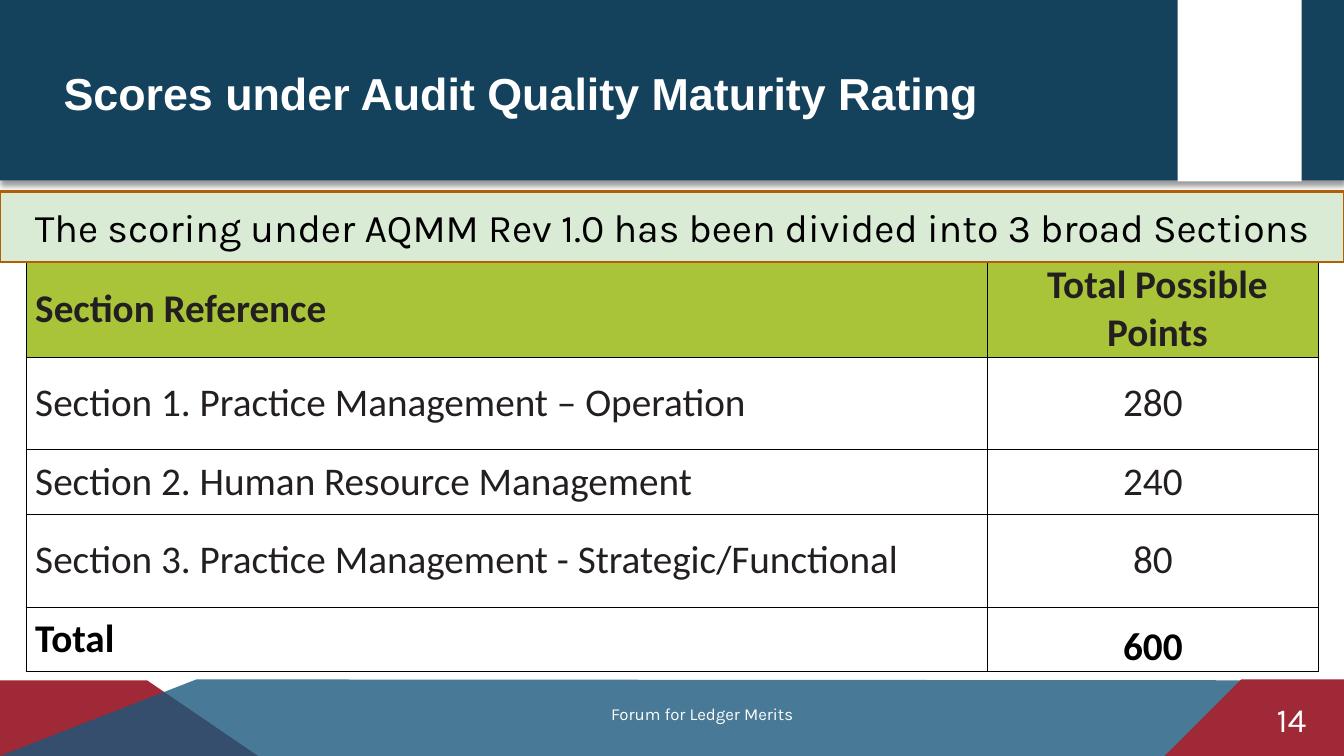
from lxml.etree import SubElement
from pptx import Presentation
from pptx.dml.color import RGBColor
from pptx.enum.shapes import MSO_SHAPE as Preset
from pptx.enum.text import MSO_ANCHOR as Anchor, MSO_AUTO_SIZE as AutoSize, PP_ALIGN as Align
from pptx.oxml.ns import qn
from pptx.util import Pt

PX = 9144  # 100 px to the inch
COLORS = {
    "navy": "14425D", "blue": "1B587C", "red": "9F2936", "white": "FFFFFF",
    "black": "000000", "ink": "231F20", "green": "A9C438", "mint": "D9EAD5",
    "orange": "B25E07",
}
SCORES = [
    ("Section Reference", "Total Possible Points"),
    ("Section 1. Practice Management – Operation", "280"),
    ("Section 2. Human Resource Management", "240"),
    ("Section 3. Practice Management - Strategic/Functional", "80"),
    ("Total", "600"),
]
COLUMN_WIDTHS = (953, 329)
ROW_HEIGHTS = (90, 92, 64, 92, 64)


def color(name):
    return RGBColor.from_string(COLORS[name])


def emu(box):
    return [length * PX for length in box]


def paint(shape, fill, line=None, width=1.5):
    shape.shadow.inherit = False
    shape.fill.solid()
    shape.fill.fore_color.rgb = color(fill)
    if line:
        shape.line.color.rgb = color(line)
        shape.line.width = Pt(width)
    else:
        shape.line.fill.background()


def write(frame, text, ink, align=Align.LEFT, **font):
    para = frame.paragraphs[0]
    para.alignment = align
    span = para.add_run()
    span.text = text
    span.font.color.rgb = color(ink)
    for name, value in font.items():
        setattr(span.font, name, value)


def set_frame(frame, **values):
    for name, value in values.items():
        setattr(frame, name, value)


def add_block(page, box, fill, line=None):
    block = page.shapes.add_shape(Preset.RECTANGLE, *emu(box))
    paint(block, fill, line)
    return block


def add_label(page, box, text, size):
    label = page.shapes.add_textbox(*emu(box))
    set_frame(label.text_frame, word_wrap=True, auto_size=AutoSize.NONE)
    write(label.text_frame, text, "white", Align.CENTER, name="Karla", size=Pt(size))


def add_outline(page, points, fill):
    builder = page.shapes.build_freeform(*points[0], scale=PX)
    builder.add_line_segments(points[1:], close=True)
    outline = builder.convert_to_shape()
    paint(outline, fill)
    return outline


def add_alpha(parent, percent):
    SubElement(parent, qn("a:alpha"), val=str(percent * 1000))


def add_footer(page, box):
    left, top, width, height = box
    right, bottom = left + width, top + height
    add_outline(page, [(left, bottom), (left, top), (left + 146, top), (left + 256, bottom)], "red")
    band = add_outline(
        page, [(left, bottom), (left + 195, top - 1), (right, top), (right, bottom)], "blue")
    add_alpha(band.fill._xPr.find(".//" + qn("a:srgbClr")), 80)
    add_outline(
        page,
        [(right, bottom), (right, top - 1), (right - 102, top - 1), (right - 178, bottom)], "red")
    add_label(page, (right - 104, top + 13, 104, 50), "14", 24)
    add_label(page, (left + 226, top + 18, 941, 30), "Forum for Ledger Merits", 12)


def add_header(page, box):
    left, top, width, height = box
    band = add_block(page, box, "navy")
    effects = band._element.spPr.find(qn("a:effectLst"))
    shadow = SubElement(effects, qn("a:outerShdw"), blurRad=str(Pt(4)), dist=str(Pt(3)),
                        dir="5400000", algn="t", rotWithShape="0")
    add_alpha(SubElement(shadow, qn("a:srgbClr"), val=COLORS["black"]), 40)
    add_block(page, (left + 1168, top, 123, height + 1), "white")

    # Title, brought in front of the band
    title = page.shapes.title
    page.shapes._spTree.append(title._element)
    title.left, title.top, title.width, title.height = emu((left + 53, top + 60, 1115, 64))
    set_frame(title.text_frame, word_wrap=True, auto_size=AutoSize.NONE,
              vertical_anchor=Anchor.MIDDLE)
    write(title.text_frame, "Scores under Audit Quality Maturity Rating", "white",
          name="Arial", size=Pt(32), bold=True)


def add_borders(cell):
    properties = cell._tc.get_or_add_tcPr()
    for side in ("lnL", "lnR", "lnT", "lnB"):
        line = SubElement(properties, qn("a:" + side), w=str(Pt(0.5)))
        SubElement(SubElement(line, qn("a:solidFill")), qn("a:srgbClr"), val=COLORS["black"])


def add_scores(page, box):
    table = page.shapes.add_table(len(SCORES), len(COLUMN_WIDTHS), *emu(box)).table
    table.first_row = table.horz_banding = False
    for column, width in zip(table.columns, COLUMN_WIDTHS):
        column.width = width * PX
    last = len(SCORES) - 1
    for r, (row, height) in enumerate(zip(table.rows, ROW_HEIGHTS)):
        row.height = height * PX
        for c, cell in enumerate(row.cells):
            add_borders(cell)
            set_frame(cell, margin_right=0, margin_top=0, margin_bottom=0,
                      margin_left=9 * PX if c == 0 or r == 0 else 0,
                      vertical_anchor=Anchor.BOTTOM if (r, c) == (last, 1) else Anchor.MIDDLE)
            if r == 0:
                cell.fill.solid()
                cell.fill.fore_color.rgb = color("green")
            else:
                cell.fill.background()
            write(cell.text_frame, SCORES[r][c], "black" if r == last else "ink",
                  Align.CENTER if c else Align.LEFT,
                  name="Calibri", size=Pt(28), bold=r in (0, last))


def add_banner(page, box):
    banner = add_block(page, box, "mint", "orange")
    set_frame(banner.text_frame, word_wrap=True, vertical_anchor=Anchor.MIDDLE)
    write(banner.text_frame,
          "The scoring under AQMM Rev 1.0 has been divided into 3 broad Sections",
          "black", Align.CENTER, name="Karla", size=Pt(28))


def main():
    deck = Presentation()
    deck.slide_width, deck.slide_height = emu((1333, 750))
    page = deck.slides.add_slide(deck.slide_layouts[5])
    add_footer(page, (0, 675, 1333, 75))
    add_header(page, (0, 0, 1333, 179))
    add_scores(page, (26, 259, sum(COLUMN_WIDTHS), sum(ROW_HEIGHTS)))
    add_banner(page, (0, 190, 1333, 70))
    deck.save("out.pptx")


if __name__ == "__main__":
    main()
